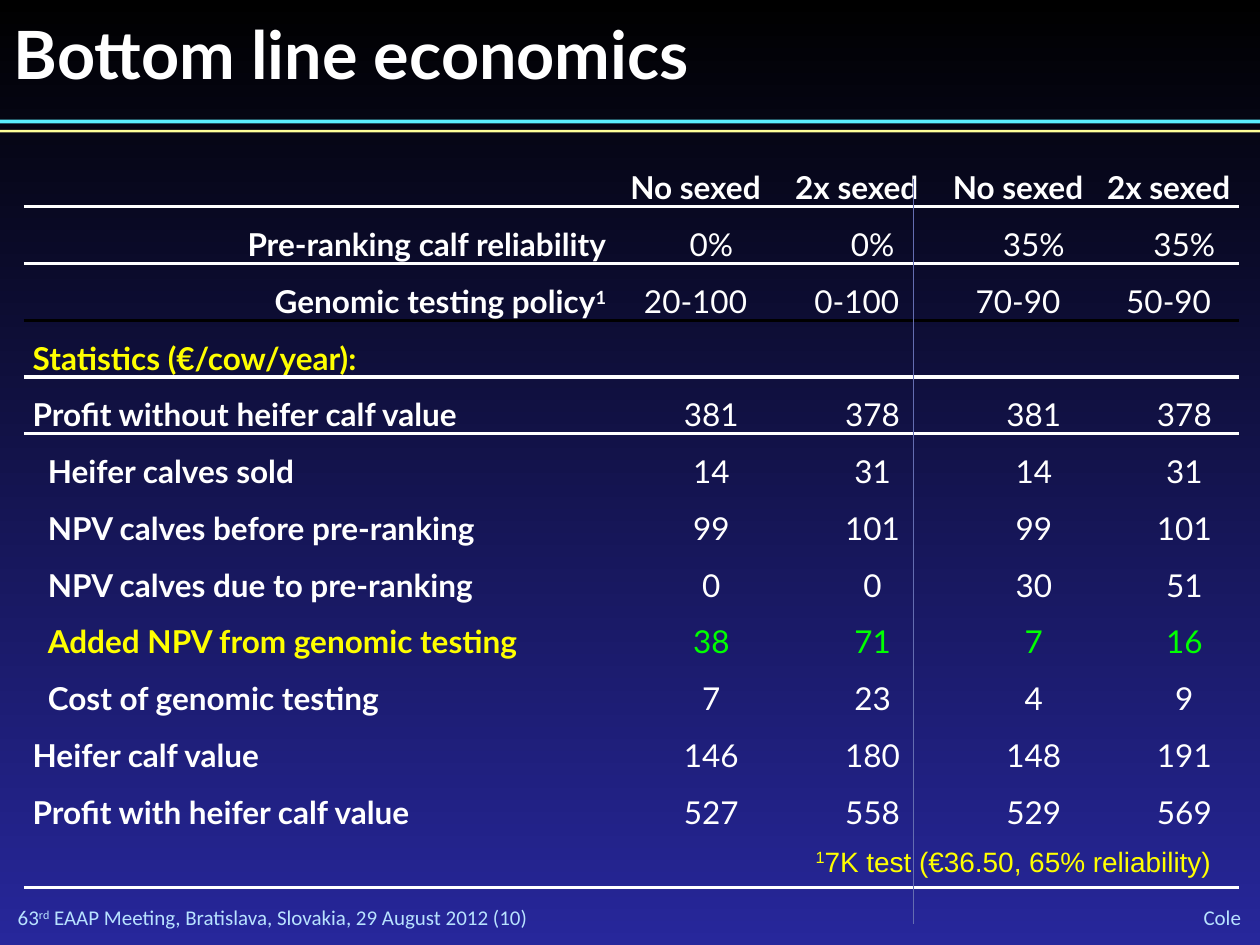
from lxml import etree
from pptx import Presentation
from pptx.dml.color import RGBColor
from pptx.enum.shapes import MSO_CONNECTOR, MSO_SHAPE
from pptx.enum.text import MSO_ANCHOR, MSO_AUTO_SIZE, PP_ALIGN
from pptx.oxml.ns import qn
from pptx.util import Inches, Pt

LEFT, MID, RIGHT = PP_ALIGN.LEFT, PP_ALIGN.CENTER, PP_ALIGN.RIGHT
TOP, CENTER = MSO_ANCHOR.TOP, MSO_ANCHOR.MIDDLE
FIXED = MSO_AUTO_SIZE.NONE
RECT, LINE = MSO_SHAPE.RECTANGLE, MSO_CONNECTOR.STRAIGHT

WHITE = RGBColor(255, 255, 255)
BLACK = RGBColor(0, 0, 0)
NAVY = RGBColor(0x27, 0x27, 0x9B)
CYAN = RGBColor(0x5B, 0xEF, 0xFF)
CREAM = RGBColor(255, 255, 0x99)
PALE = RGBColor(0xB8, 0xE2, 0xFF)
YELLOW = RGBColor(255, 255, 0)
GREEN = RGBColor(0, 255, 0)
SLATE = RGBColor(0x64, 0x6D, 0xB0)

ROW = Inches(0.45)
COLS = [4.69, 1.28, 1.28, 1.28, 1.11]
NONE = "{2D5ABB26-0587-4C30-8999-92F81FD0307C}"
FLAT = dict(margin_left=0, margin_right=0, margin_top=0, margin_bottom=0)


def style(item, vals):
    for key, val in vals.items():
        setattr(item, key, val)


def write(frame, parts, align, color, font):
    para = frame.paragraphs[0]
    para.alignment = align
    for text, base in parts:
        run = para.add_run()
        run.text = text
        style(run.font, font)
        run.font.color.rgb = color
        if base:
            run._r.get_or_add_rPr().set("baseline", str(base))
    return para


deck = Presentation()
style(deck, dict(slide_width=Inches(10), slide_height=Inches(7.5)))
wide, high = deck.slide_width, deck.slide_height
slide = deck.slides.add_slide(deck.slide_layouts[5])
shapes = slide.shapes

back = slide.background.fill
back.gradient()
back.gradient_angle = 270
for stop, color, pos in zip(back.gradient_stops, (BLACK, NAVY), (0, 1)):
    stop.color.rgb = color
    stop.position = pos

title = shapes.title
style(title, dict(left=Inches(0.11), top=Inches(0.1),
                  width=Inches(9), height=Inches(0.7)))
style(title.text_frame, dict(FLAT, auto_size=FIXED, vertical_anchor=TOP))
write(title.text_frame, [("Bottom line economics", 0)], LEFT, WHITE,
      dict(name="Lato", size=Pt(38), bold=True))

for top, thick, color in [(0.95, 0.03, CYAN), (1.03, 0.02, CREAM)]:
    bar = shapes.add_shape(RECT, 0, Inches(top), wide, Inches(thick))
    bar.shadow.inherit = False
    bar.fill.solid()
    bar.fill.fore_color.rgb = color
    bar.line.fill.background()

small = dict(name="Calibri", size=Pt(12))
note = dict(name="Arial", size=Pt(16))
event = [("63", 0), ("rd", 30000),
         (" EAAP Meeting, Bratislava, Slovakia, 29 August 2012 (10)", 0)]
test = [("1", 30000), ("7K test (€36.50, 65% reliability)", 0)]
foot = dict(FLAT, vertical_anchor=CENTER)

LABELS = [
    (0.14, 7.18, 5.22, 0.2, event, LEFT, PALE, small, foot),
    (8.72, 7.17, 1.13, 0.21, [("Cole", 0)], RIGHT, PALE, small, foot),
    (5.79, 6.65, 3.92, 0.37, test, RIGHT, YELLOW, note, {}),
]

DATA = [
    ("", "No sexed", "2x sexed", "No sexed", "2x sexed"),
    ("Pre-ranking calf reliability", "0%", "0%", "35%", "35%"),
    ("Genomic testing policy", "20-100", "0-100", "70-90", "50-90"),
    ("Statistics (€/cow/year):", "", "", "", ""),
    ("Profit without heifer calf value", "381", "378", "381", "378"),
    ("Heifer calves sold", "14", "31", "14", "31"),
    ("NPV calves before pre-ranking", "99", "101", "99", "101"),
    ("NPV calves due to pre-ranking", "0", "0", "30", "51"),
    ("Added NPV from genomic testing", "38", "71", "7", "16"),
    ("Cost of genomic testing", "7", "23", "4", "9"),
    ("Heifer calf value", "146", "180", "148", "191"),
    ("Profit with heifer calf value", "527", "558", "529", "569"),
]
HEAD, POLICY, STATS, ADDED, LAST = 0, 2, 3, 8, len(DATA) - 1
RULES = {HEAD: WHITE, POLICY: BLACK, STATS: WHITE, LAST: WHITE}
INNER = range(5, 10)

grid = shapes.add_table(len(DATA), len(COLS), Inches(0.19), Inches(1.19),
                        Inches(sum(COLS)), ROW * (len(DATA) + 1)).table
style(grid, dict(first_row=False, horz_banding=False))
grid._tbl.tblPr.find(qn("a:tableStyleId")).text = NONE
for col, size in zip(grid.columns, COLS):
    col.width = Inches(size)
for row in grid.rows:
    row.height = ROW
grid.rows[LAST].height = ROW * 2

for r, texts in enumerate(DATA):
    for c, text in enumerate(texts):
        cell = grid.cell(r, c)
        side = 0 if r == HEAD else Inches(0.07)
        inset = Inches(0.12) if c == 0 and r in INNER else 0
        style(cell, dict(FLAT, margin_left=side + inset, margin_right=side))
        cell.fill.background()
        if c:
            align = MID
            color = GREEN if r == ADDED else WHITE
        else:
            align = RIGHT if r in (1, POLICY) else LEFT
            color = YELLOW if r in (STATS, ADDED) else WHITE
        parts = [(text, 0)] if text else []
        if c == 0 and r == POLICY:
            parts.append(("1", 30000))
        para = write(cell.text_frame, parts, align, color,
                     dict(name="Lato", size=Pt(18), bold=c == 0 or r == HEAD))
        if text:
            para.line_spacing = 1.5
        if c and r not in (HEAD, POLICY):
            para._p.get_or_add_pPr().set("indent", str(Inches(0.25)))
        for tag, at in (("a:lnB", r), ("a:lnT", r - 1)):
            if at in RULES:
                edge = etree.Element(qn(tag), w=str(Pt(2.25)))
                fill = etree.SubElement(edge, qn("a:solidFill"))
                etree.SubElement(fill, qn("a:srgbClr"), val=str(RULES[at]))
                cell._tc.get_or_add_tcPr().insert(0, edge)

split = shapes.add_connector(LINE, Inches(7.25), Inches(1.42),
                             Inches(7.25), Inches(7.33))
split.line.color.rgb = SLATE
split.line.width = Pt(0.75)
etree.SubElement(split._element.spPr, qn("a:effectLst"))

for left, top, width, height, parts, align, color, font, form in LABELS:
    box = shapes.add_textbox(*map(Inches, (left, top, width, height)))
    style(box.text_frame, dict(form, word_wrap=True))
    write(box.text_frame, parts, align, color, font)

deck.save("out.pptx")
